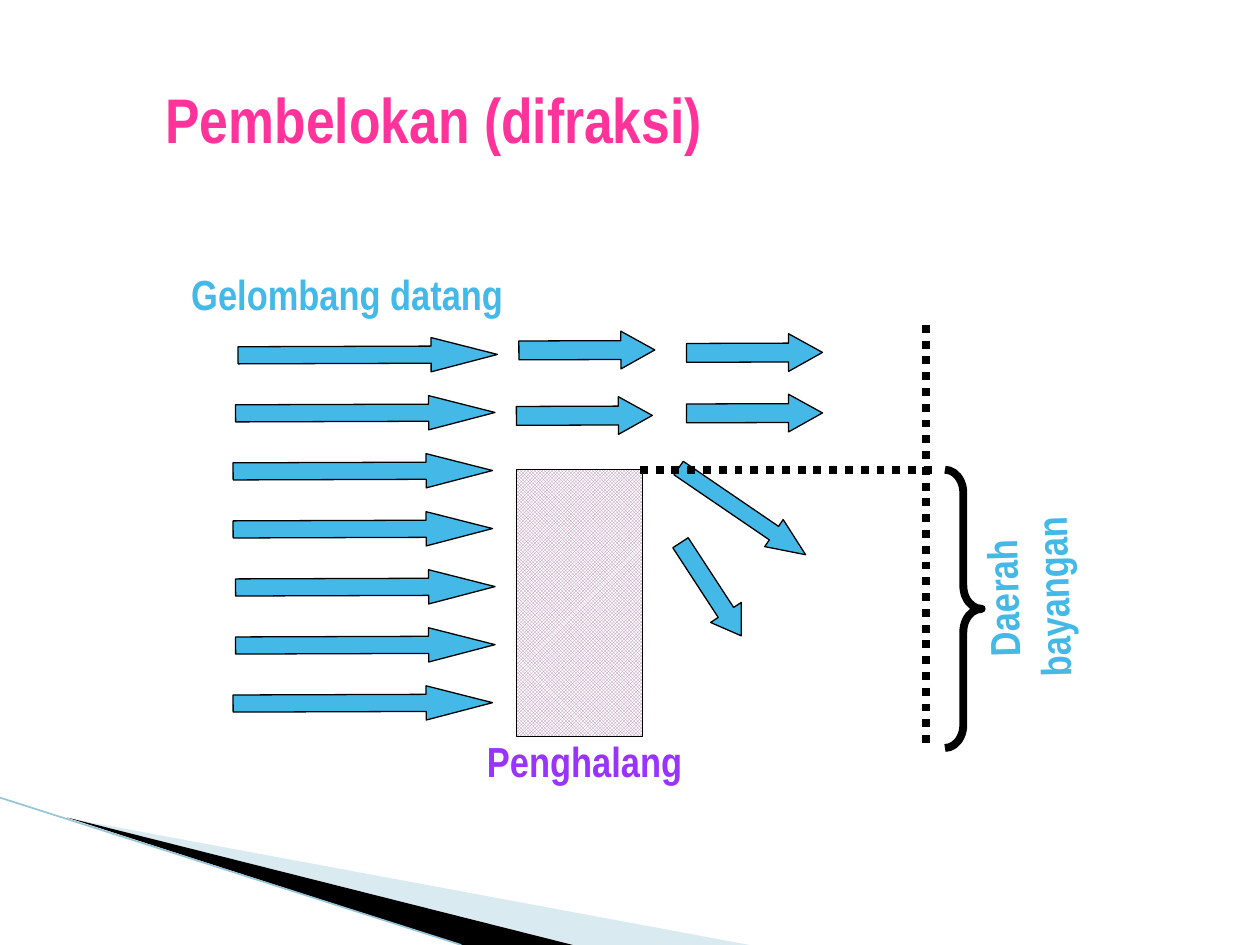
from dataclasses import dataclass

from lxml.etree import SubElement
from pptx import Presentation
from pptx.dml.color import RGBColor
from pptx.enum.dml import MSO_LINE, MSO_PATTERN
from pptx.enum.shapes import MSO_CONNECTOR, MSO_SHAPE
from pptx.enum.text import MSO_ANCHOR, MSO_AUTO_SIZE, PP_ALIGN
from pptx.oxml.ns import qn
from pptx.util import Cm, Pt


@dataclass(frozen=True)
class Theme:
    font: str = "Arial Narrow"
    title_size: int = 36
    label_size: int = 24
    thin: float = 0.75
    edge: float = 0.95
    thick: float = 4.5
    ink: str = "000000"
    paper: str = "FFFFFF"
    wave: str = "44B9E8"
    title: str = "FF3399"
    obstacle: str = "9933FF"
    check: str = "B389B0"
    pale: str = "A0CBDC"
    rim: str = "97C5D8"


THEME = Theme()
TILT = -0.2
FIT = MSO_AUTO_SIZE.SHAPE_TO_FIT_TEXT

LABELS = [
    ("Pembelokan (difraksi)", (2.77, 1.4, 11.96, 1.96), THEME.title_size, THEME.title, 0,
     {"vertical_anchor": MSO_ANCHOR.MIDDLE}),
    ("Gelombang datang", (3.38, 5.28, 7.24, 1.27), THEME.label_size, THEME.wave, 0, {"auto_size": FIT}),
    ("Penghalang", (9.22, 14.71, 5.13, 1.27), THEME.label_size, THEME.obstacle, 0, {"auto_size": FIT}),
    ("Daerah bayangan", (18.03, 10.9, 5.36, 2.29), THEME.label_size, THEME.wave, 268.4, {"auto_size": FIT}),
]
INCOMING_LEFTS = [4.8, 4.75, 4.7, 4.7, 4.75, 4.75, 4.7]
INCOMING_TOP, INCOMING_PITCH = 6.81, 1.17
PASSING = [(10.46, 6.68), (10.41, 8.0), (13.84, 6.73), (13.84, 7.95)]
BENT = [((13.41, 9.98, 3.1, 0.66), 34.3, 1.17), ((13.21, 11.51, 2.24, 0.74), 56.9, 0.76)]
BARRIER = (10.41, 9.47, 2.54, 5.38)
BRACE = (19.05, 9.47, 0.74, 5.61)
SHADOW_LIMITS = [((18.67, 6.55), (18.67, 15.04)), ((12.9, 9.47), (18.8, 9.47))]
PALE_WEDGE = [(1.4, 16.5), (15.11, 19.05), (11.58, 19.05)]
DARK_WEDGE = [(1.35, 16.48), (11.55, 19.05), (9.3, 19.05)]
RIM = ((0, 16.08), (9.3, 19.05))


def cms(values):
    """Turn centimetre numbers into lengths."""
    return [Cm(value) for value in values]


def apply(target, formats):
    """Set each named format value on the target."""
    for name, value in formats.items():
        setattr(target, name, value)


def paint(fill, color):
    """Give a fill one solid colour."""
    fill.solid()
    fill.fore_color.rgb = RGBColor.from_string(color)


def outline(part, color, width, dash=None):
    """Colour and size the line of a part."""
    paint(part.line.fill, color)
    apply(part.line, {"width": Pt(width), "dash_style": dash})


def add_part(slide, preset, box, adjustments=()):
    """Add an outlined preset shape without shadow."""
    part = slide.shapes.add_shape(preset, *cms(box))
    part.shadow.inherit = False
    for index, value in enumerate(adjustments):
        part.adjustments[index] = value
    outline(part, THEME.ink, THEME.thin)
    return part


def add_wave(slide, box, rotation, head):
    """Add one wave arrow with the given head ratio."""
    wave = add_part(slide, MSO_SHAPE.RIGHT_ARROW, box, (0.5, head))
    paint(wave.fill, THEME.wave)
    wave.rotation = rotation


def add_rule(slide, start, end, color, width, dash=None):
    """Add a straight line without shadow."""
    rule = slide.shapes.add_connector(MSO_CONNECTOR.STRAIGHT, *cms(start + end))
    outline(rule, color, width, dash)
    SubElement(rule._element.spPr, qn("a:effectLst"))


def add_wedge(slide, points, color):
    """Add a filled corner wedge without outline."""
    start, *others = [cms(point) for point in points]
    builder = slide.shapes.build_freeform(*start)
    builder.add_line_segments(others, close=True)
    wedge = builder.convert_to_shape()
    wedge.shadow.inherit = False
    paint(wedge.fill, color)
    wedge.line.fill.background()
    return wedge


def add_label(slide, text, box, size, color, rotation, frame_formats):
    """Add a centred bold label."""
    label = slide.shapes.add_textbox(*cms(box))
    label.rotation = rotation
    apply(label.text_frame, {"word_wrap": True, **frame_formats})
    paragraph = label.text_frame.paragraphs[0]
    paragraph.alignment = PP_ALIGN.CENTER
    run = paragraph.add_run()
    run.text = text
    apply(run.font, {"name": THEME.font, "size": Pt(size), "bold": True})
    run.font.color.rgb = RGBColor.from_string(color)


def main():
    """Build the diffraction slide."""
    deck = Presentation()
    apply(deck, {"slide_width": Cm(25.4), "slide_height": Cm(19.05)})
    slide = deck.slides.add_slide(deck.slide_layouts[6])

    pale = add_wedge(slide, PALE_WEDGE, THEME.pale)
    tint = pale._element.spPr.find(qn("a:solidFill"))[0]
    SubElement(tint, qn("a:alpha"), val="40000")
    add_wedge(slide, DARK_WEDGE, THEME.ink)
    add_rule(slide, *RIM, THEME.rim, THEME.edge)

    barrier = add_part(slide, MSO_SHAPE.RECTANGLE, BARRIER)
    barrier.fill.patterned()
    barrier.fill.pattern = MSO_PATTERN.SMALL_CHECKER_BOARD
    barrier.fill.fore_color.rgb = RGBColor.from_string(THEME.check)
    barrier.fill.back_color.rgb = RGBColor.from_string(THEME.paper)

    for row, left in enumerate(INCOMING_LEFTS):
        add_wave(slide, (left, INCOMING_TOP + row * INCOMING_PITCH, 5.23, 0.69), TILT, 1.94)
    for corner in PASSING:
        add_wave(slide, (*corner, 2.74, 0.76), TILT, 0.9)
    for box, rotation, head in BENT:
        add_wave(slide, box, rotation, head)

    for start, end in SHADOW_LIMITS:
        add_rule(slide, start, end, THEME.ink, THEME.thick, MSO_LINE.ROUND_DOT)
    brace = add_part(slide, MSO_SHAPE.RIGHT_BRACE, BRACE, (0.63, 0.5))
    brace.fill.background()
    outline(brace, THEME.ink, THEME.thick)

    for label in LABELS:
        add_label(slide, *label)
    deck.save("out.pptx")


if __name__ == "__main__":
    main()
